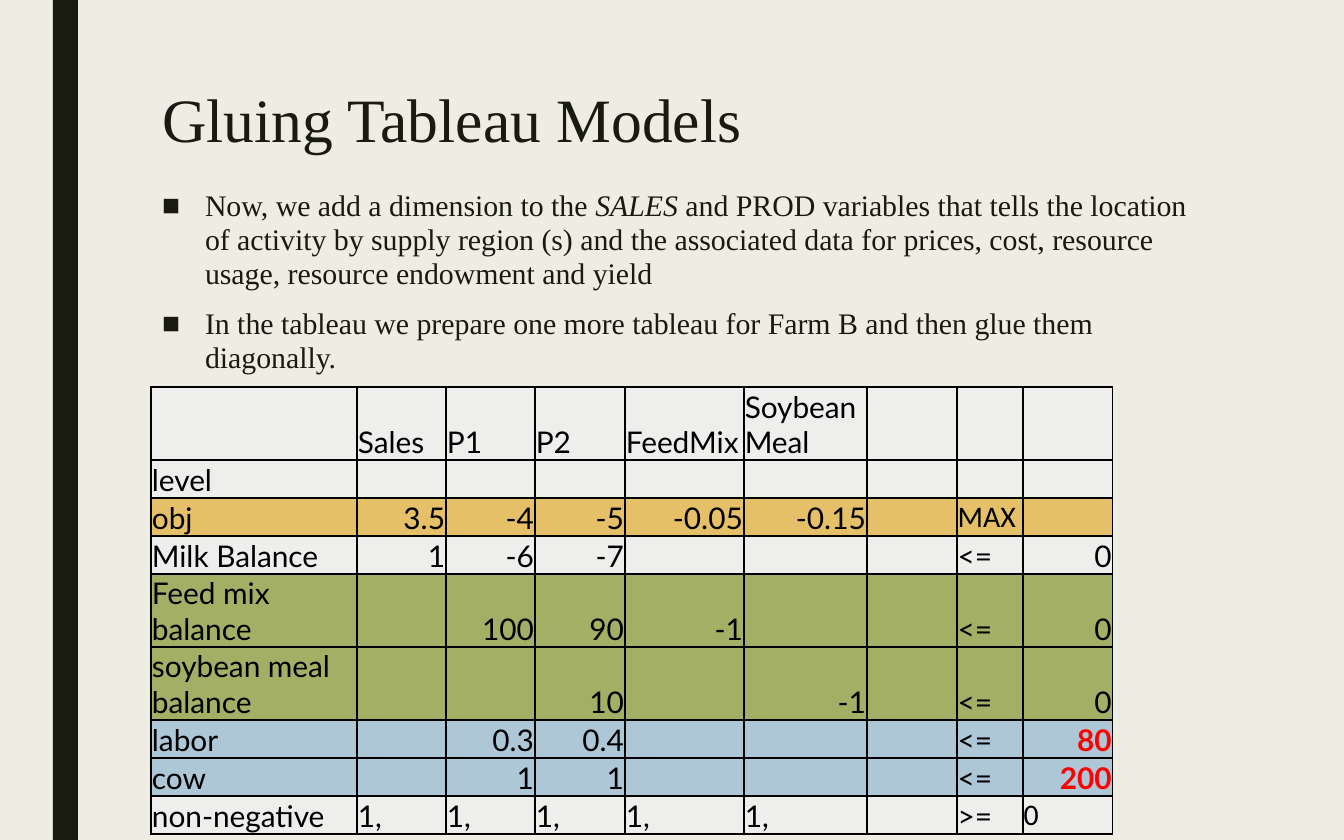
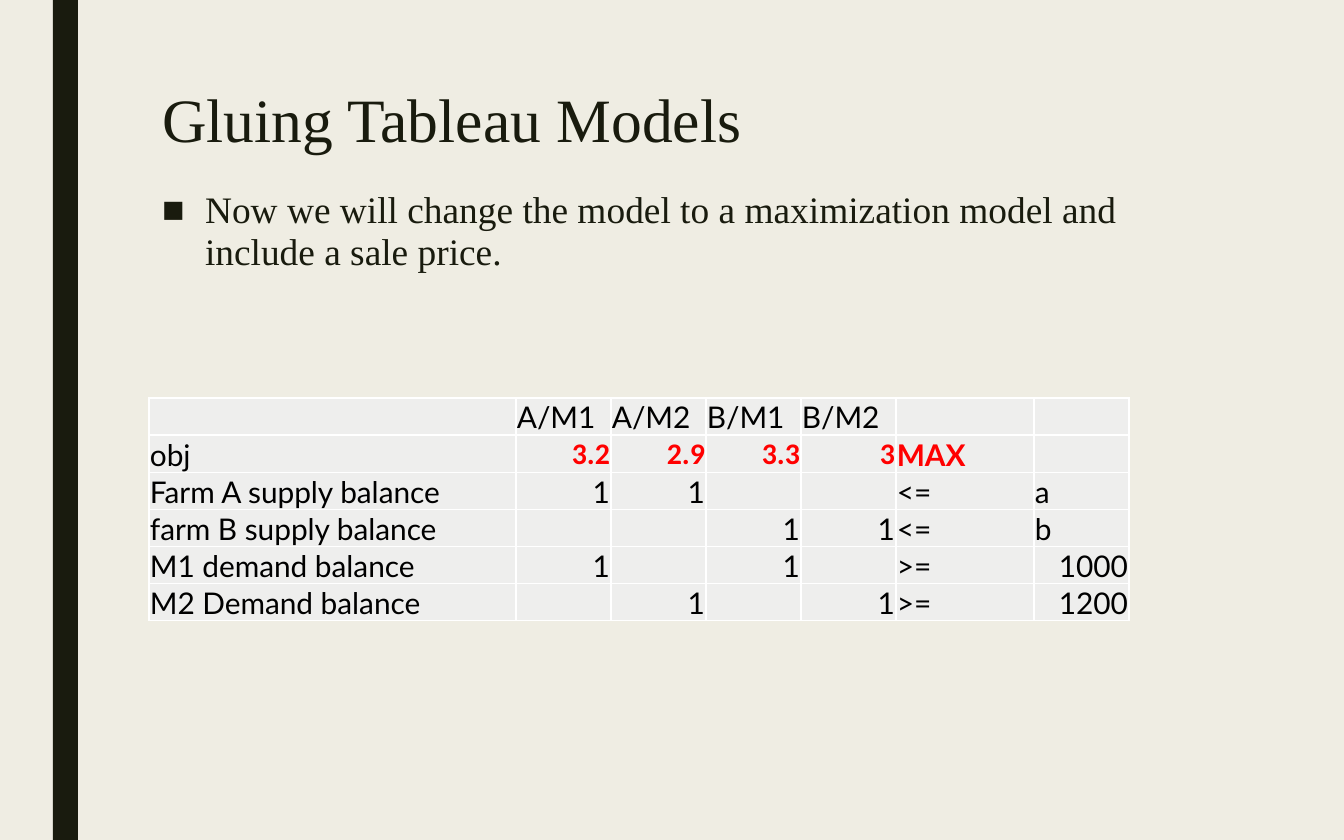
from lxml.etree import SubElement
from pptx import Presentation
from pptx.dml.color import RGBColor
from pptx.enum.shapes import MSO_SHAPE as Shape
from pptx.enum.text import MSO_ANCHOR as Anchor, MSO_AUTO_SIZE as AutoSize, PP_ALIGN as Align
from pptx.oxml import parse_xml
from pptx.oxml.ns import nsdecls, qn
from pptx.util import Pt

PX = 914400 / 134.4  # EMU in one px
COLORS = {
    "paper": "EFEDE3", "ink": "191B0E", "black": "000000", "white": "FFFFFF",
    "red": "FF0000", "plain": "EEEEED", "gold": "E6C069", "green": "A3AF65",
    "blue": "ADC7D6",
}
SERIF, SANS, SANS_ALT = "Times New Roman", "Lato", "Calibri"


def emu(px):
    return round(px * PX)


def rgb(name):
    return RGBColor.from_string(COLORS[name])


def is_number(text):
    return text.lstrip("-").replace(".", "", 1).isdigit()


class Deck:
    """Holds the shared style and the current slide."""

    def __init__(self):
        self.prs = Presentation()
        self.prs.slide_width, self.prs.slide_height = emu(1344), emu(840)
        background = self.prs.slide_master.background.fill
        background.solid()
        background.fore_color.rgb = rgb("paper")
        self.slide = None

    def add_slide(self, title):
        self.slide = self.prs.slides.add_slide(self.prs.slide_layouts[1])
        self.band()
        self.title(title)

    def band(self):
        band = self.slide.shapes.add_shape(Shape.RECTANGLE, emu(53), 0, emu(25), emu(840))
        band.shadow.inherit = False
        band.fill.solid()
        band.fill.fore_color.rgb = rgb("ink")
        band.line.fill.background()

    def place(self, holder, top, height):
        holder.left, holder.top = emu(151), emu(top)
        holder.width, holder.height = emu(1059), emu(height)
        frame = holder.text_frame
        frame.word_wrap = True
        frame.auto_size = AutoSize.NONE
        frame.vertical_anchor = Anchor.TOP
        frame.margin_left = frame.margin_right = emu(11)
        frame.margin_top = frame.margin_bottom = emu(5)
        return frame

    def style(self, run, size, font, color, bold=False, italic=False):
        run.font.size, run.font.name = Pt(size), font
        run.font.bold, run.font.italic = bold, italic
        run.font.color.rgb = rgb(color)

    def title(self, text):
        frame = self.place(self.slide.shapes.title, 85, 90)
        frame.text = text
        heading = frame.paragraphs[0]
        heading.alignment, heading.line_spacing = Align.LEFT, 0.89
        self.style(heading.runs[0], 33, SERIF, "ink")

    def bullets(self, items, size):
        """Each item is a list of pieces; every second piece is italic."""
        frame = self.place(self.slide.placeholders[1], 185, 534)
        for index, pieces in enumerate(items):
            item = frame.add_paragraph() if index else frame.paragraphs[0]
            item.line_spacing = 0.94
            item.space_before, item.space_after = Pt(7.5), Pt(1.5)
            props = item._p.get_or_add_pPr()
            props.set("marL", str(emu(43)))
            props.set("indent", str(-emu(43)))
            SubElement(props, qn("a:buFont")).set("typeface", "Arial")
            SubElement(props, qn("a:buChar")).set("char", "■")
            for position, piece in enumerate(pieces):
                run = item.add_run()
                run.text = piece
                self.style(run, size, SERIF, "ink", italic=position % 2 == 1)

    def table(self, left, top, widths, heights, rows, border, fills=None, special=None):
        """fills gives a colour per row; special overrides the style of single cells."""
        fills, special = fills or {}, special or {}
        grid = self.slide.shapes.add_table(
            len(rows), len(widths), emu(left), emu(top),
            emu(sum(widths)), emu(sum(heights))).table
        grid.first_row = grid.horz_banding = False
        for column, width in zip(grid.columns, widths):
            column.width = emu(width)
        for r, (texts, height) in enumerate(zip(rows, heights)):
            grid.rows[r].height = emu(height)
            for c, text in enumerate(texts):
                self.cell(grid.cell(r, c), text, fills.get(r, "plain"), border,
                          **special.get((r, c), {}))

    def cell(self, cell, text, fill, border, font=SANS, color="black", bold=False, align=None):
        cell.margin_left = cell.margin_right = cell.margin_top = emu(1)
        cell.margin_bottom = 0
        cell.vertical_anchor = Anchor.BOTTOM
        cell.fill.solid()
        cell.fill.fore_color.rgb = rgb(fill)
        for index, side in enumerate(("lnL", "lnR", "lnT", "lnB")):
            cell._tc.get_or_add_tcPr().insert(index, parse_xml(
                f'<a:{side} {nsdecls("a")} w="12700"><a:solidFill>'
                f'<a:srgbClr val="{COLORS[border]}"/></a:solidFill></a:{side}>'))
        entry = cell.text_frame.paragraphs[0]
        if text:
            entry.text = text
            entry.alignment = align or (Align.RIGHT if is_number(text) else Align.LEFT)
            self.style(entry.runs[0], 16, font, color, bold)
        else:  # keeps an empty cell from stretching its row
            SubElement(entry._p, qn("a:endParaRPr")).set("sz", "1200")


def main():
    deck = Deck()
    red = {"color": "red", "bold": True}

    # Farm tableau
    deck.add_slide("Gluing Tableau Models")
    deck.bullets([
        ["Now, we add a dimension to the ", "SALES",
         " and PROD variables that tells the location of activity by supply region (s) "
         "and the associated data for prices, cost, resource usage, resource endowment and yield"],
        ["In the tableau we prepare one more tableau for Farm B and then glue them diagonally."],
    ], 16)
    farm_rows = [
        ["", "Sales", "P1", "P2", "FeedMix", "Soybean Meal", "", "", ""],
        ["level"] + [""] * 8,
        ["obj", "3.5", "-4", "-5", "-0.05", "-0.15", "", "MAX", ""],
        ["Milk Balance", "1", "-6", "-7", "", "", "", "<=", "0"],
        ["Feed mix balance", "", "100", "90", "-1", "", "", "<=", "0"],
        ["soybean meal balance", "", "", "10", "", "-1", "", "<=", "0"],
        ["labor", "", "0.3", "0.4", "", "", "", "<=", "80"],
        ["cow", "", "1", "1", "", "", "", "<=", "200"],
        ["non-negative"] + ["1,"] * 5 + ["", ">=", "0"],
    ]
    two_line_rows = (0, 4, 5)
    deck.table(
        151, 387, [206, 89, 89, 90, 119, 123, 90, 66, 90],
        [73 if r in two_line_rows else 38 for r in range(len(farm_rows))],
        farm_rows, "black",
        fills={2: "gold", 4: "green", 5: "green", 6: "blue", 7: "blue"},
        special={(2, 7): {"font": SANS_ALT}, (6, 8): red, (7, 8): red,
                 (8, 8): {"font": SANS_ALT, "align": Align.LEFT}})

    # Transport tableau
    deck.add_slide("Gluing Tableau Models")
    deck.bullets([
        ["Now we will change the model to a maximization model and include a sale price."],
    ], 20)
    transport_rows = [
        ["", "A/M1", "A/M2", "B/M1", "B/M2", "", ""],
        ["obj", "3.2", "2.9", "3.3", "3", "MAX", ""],
        ["Farm A supply balance", "1", "1", "", "", "<=", "a"],
        ["farm B supply balance", "", "", "1", "1", "<=", "b"],
        ["M1 demand balance", "1", "", "1", "", ">=", "1000"],
        ["M2 Demand balance", "", "1", "", "1", ">=", "1200"],
    ]
    prices = {(1, c): {**red, "font": SANS_ALT} for c in range(1, 5)}
    deck.table(
        149, 398, [367] + [95] * 4 + [138, 95], [37] * len(transport_rows),
        transport_rows, "white", special={**prices, (1, 5): red})

    deck.prs.save("out.pptx")


if __name__ == "__main__":
    main()
